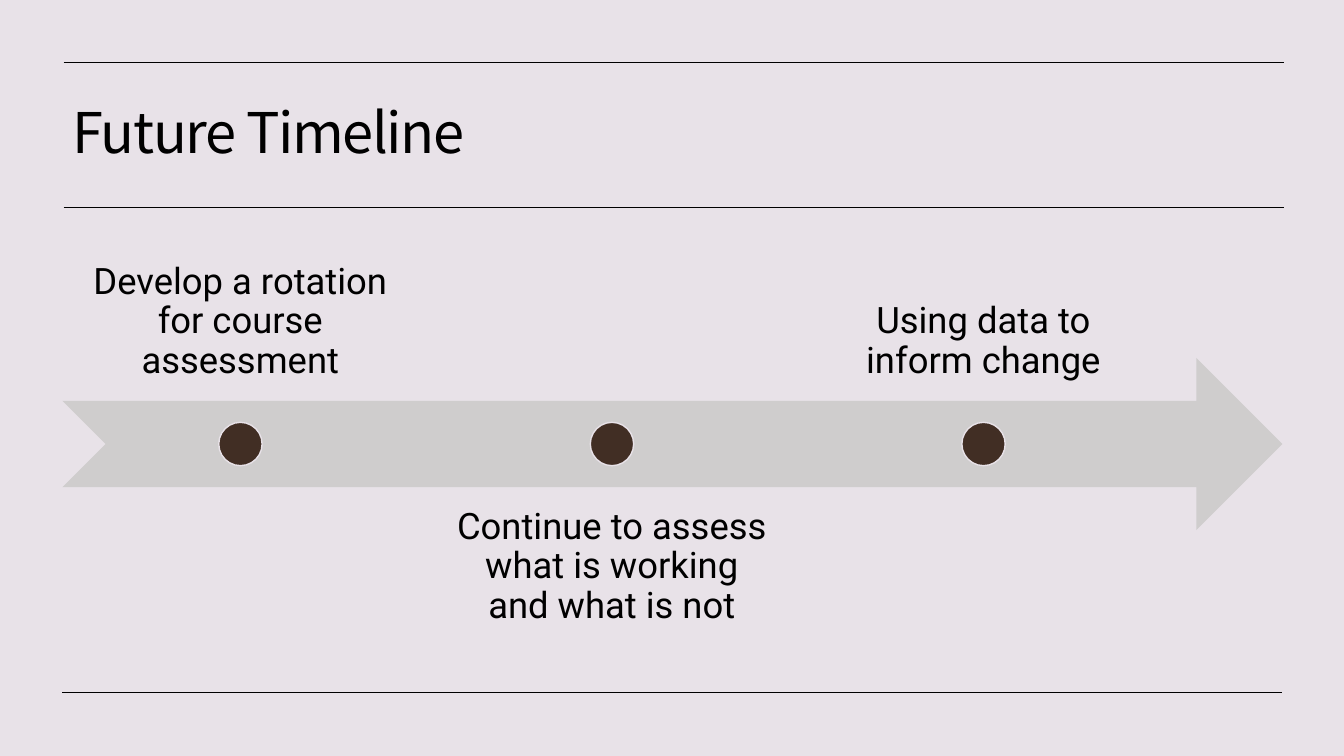
from lxml.etree import SubElement
from pptx import Presentation
from pptx.dml.color import RGBColor
from pptx.enum.shapes import MSO_CONNECTOR, MSO_SHAPE
from pptx.enum.text import MSO_ANCHOR, PP_ALIGN
from pptx.oxml.ns import qn
from pptx.util import Inches, Pt

TITLE = "Future Timeline"
STEPS = [
    "Develop a rotation for course assessment",
    "Continue to assess what is working and what is not",
    "Using data to inform change",
]
RULES = [(0.63, 0.62), (0.63, 2.06), (0.62, 6.87)]  # left, top
RULE_W = 12.1
PAPER, INK, BAND, DOT = "E8E2E8", "000000", "CFCDCD", "412E24"

ARROW = (0.62, 3.55, 12.1, 1.71)
STEP_X, STEP_W, STEP_H, PITCH = 0.63, 3.51, 1.71, 3.685
ABOVE, BELOW = 2.27, 4.84
DOT_Y, DOT_D = 4.19, 0.43


def color(code):
    return RGBColor.from_string(code)


def add_rule(slide, left, top):
    rule = slide.shapes.add_connector(
        MSO_CONNECTOR.STRAIGHT, Inches(left), Inches(top),
        Inches(left + RULE_W), Inches(top))
    rule.line.color.rgb = color(INK)
    rule.line.width = Pt(0.5)
    SubElement(rule._element.spPr, qn("a:effectLst"))


def add_solid(slide, kind, box, fill):
    """Add a preset shape with a plain fill and no outline."""
    shape = slide.shapes.add_shape(kind, *map(Inches, box))
    shape.shadow.inherit = False
    shape.fill.solid()
    shape.fill.fore_color.rgb = color(fill)
    shape.line.fill.background()
    return shape


def add_text(slide, text, box, font, size, anchor, align, inset=None):
    frame = slide.shapes.add_textbox(*map(Inches, box)).text_frame
    frame.word_wrap = True
    frame.vertical_anchor = anchor
    if inset is not None:
        frame.margin_left = frame.margin_right = Inches(inset)
        frame.margin_top = frame.margin_bottom = Inches(inset)
    frame.text = text
    para = frame.paragraphs[0]
    para.alignment = align
    para.line_spacing = 0.9
    run = para.runs[0]
    run.font.name = font
    run.font.size = Pt(size)
    run.font.color.rgb = color(INK)
    return run


def add_step(slide, index, text):
    """Add a label, above or below the arrow by turns, and its dot."""
    left = STEP_X + index * PITCH
    if index % 2:
        top, anchor = BELOW, MSO_ANCHOR.TOP
    else:
        top, anchor = ABOVE, MSO_ANCHOR.BOTTOM
    add_text(slide, text, (left, top, STEP_W, STEP_H), "Roboto", 26,
             anchor, PP_ALIGN.CENTER, 0.2)
    dot_x = left + (STEP_W - DOT_D) / 2
    dot = add_solid(slide, MSO_SHAPE.OVAL, (dot_x, DOT_Y, DOT_D, DOT_D), DOT)
    dot.line.color.rgb = color(PAPER)
    dot.line.width = Pt(1)


def main():
    deck = Presentation()
    deck.slide_width, deck.slide_height = Inches(13.33), Inches(7.5)
    slide = deck.slides.add_slide(deck.slide_layouts[6])
    slide.background.fill.solid()
    slide.background.fill.fore_color.rgb = color(PAPER)

    for left, top in RULES:
        add_rule(slide, left, top)
    title = add_text(slide, TITLE, (0.62, 0.75, 12.08, 1.19),
                     "Noto Sans CJK KR", 40, MSO_ANCHOR.MIDDLE, PP_ALIGN.LEFT)
    title.font._element.set("spc", "-100")

    add_solid(slide, MSO_SHAPE.NOTCHED_RIGHT_ARROW, ARROW, BAND)
    for index, text in enumerate(STEPS):
        add_step(slide, index, text)
    deck.save("out.pptx")


if __name__ == "__main__":
    main()
